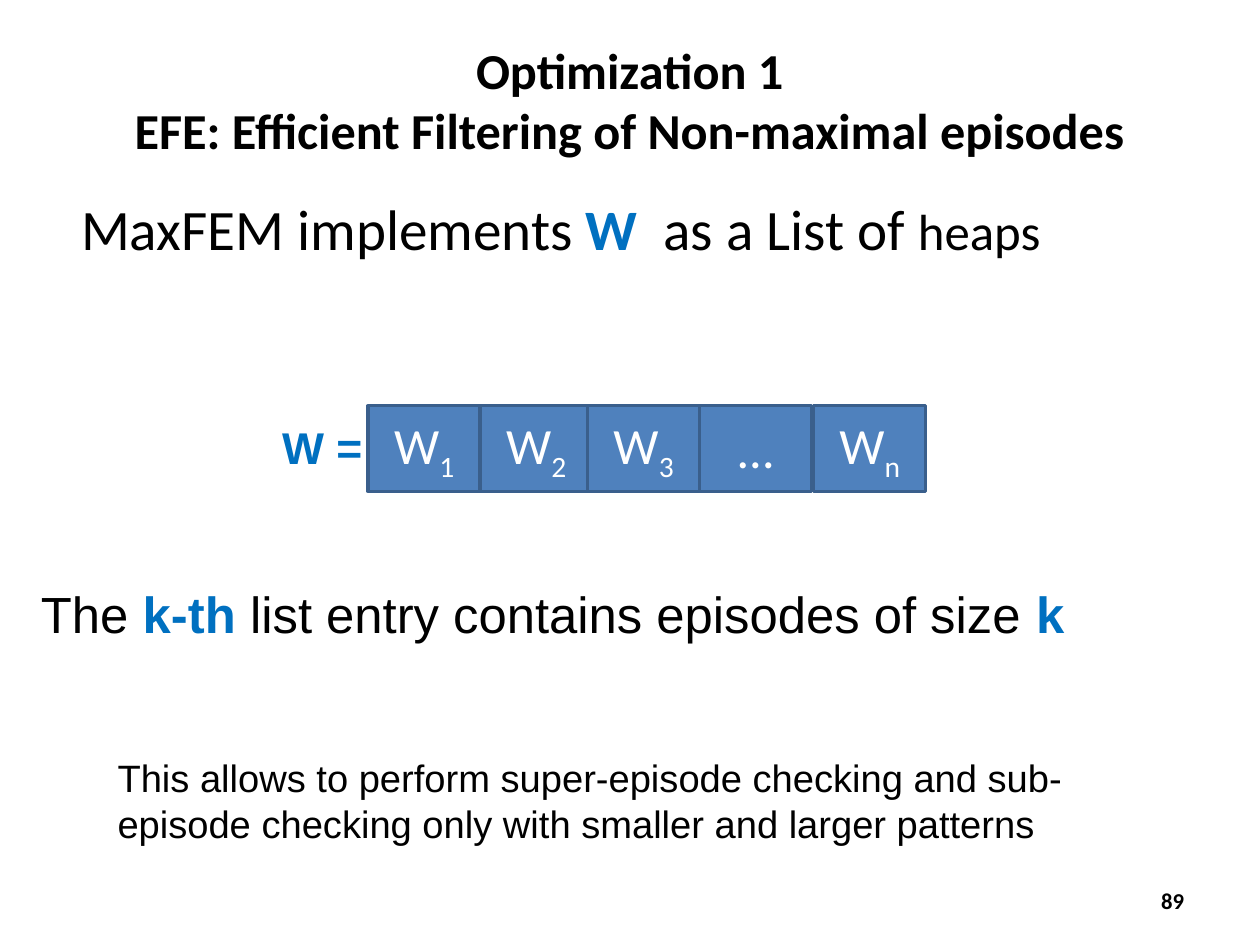
from pptx import Presentation
from pptx.dml.color import RGBColor
from pptx.enum import shapes, text
from pptx.util import Cm, Inches, Pt

BLACK, WHITE, BLUE = "000000", "FFFFFF", "0070C0"
CELL_FILL, CELL_LINE = "4F81BD", "3A5F8C"


def color(value):
    return RGBColor.from_string(value)


def add_run(p, words, size, font="Calibri", fill=BLACK, bold=False):
    r = p.add_run()
    r.text = words
    r.font.name = font
    r.font.size = Pt(size)
    r.font.bold = bold
    r.font.color.rgb = color(fill)
    return r


def set_frame(tf, inset=(0.1, 0.05), anchor=text.MSO_ANCHOR.TOP, wrap=True):
    tf.auto_size = text.MSO_AUTO_SIZE.NONE
    tf.word_wrap = wrap
    tf.vertical_anchor = anchor
    tf.margin_left = tf.margin_right = Inches(inset[0])
    tf.margin_top = tf.margin_bottom = Inches(inset[1])
    return tf.paragraphs[0]


def add_title(slide, box, lines):
    sp = slide.shapes.title
    sp.left, sp.top, sp.width, sp.height = map(Inches, box)
    p = set_frame(sp.text_frame, (0.11, 0.06), text.MSO_ANCHOR.MIDDLE)
    p.alignment = text.PP_ALIGN.CENTER
    for i, line in enumerate(lines):
        if i:
            p.add_line_break()
        add_run(p, line, 31.7, bold=True)


def add_text(slide, box, runs, font="Arial", **frame):
    sp = slide.shapes.add_textbox(*map(Inches, box))
    p = set_frame(sp.text_frame, **frame)
    for words, size, fill, bold in runs:
        add_run(p, words, size, font, fill, bold)
    return p


def add_heap_list(slide, box, cell_width, cells):
    left, top, height = box
    for offset, name, index in cells:
        sp = slide.shapes.add_shape(
            shapes.MSO_SHAPE.RECTANGLE, Inches(left + offset), Inches(top),
            Inches(cell_width), Inches(height))
        sp.shadow.inherit = False
        sp.fill.solid()
        sp.fill.fore_color.rgb = color(CELL_FILL)
        sp.line.color.rgb = color(CELL_LINE)
        sp.line.width = Pt(2)
        p = set_frame(sp.text_frame, anchor=text.MSO_ANCHOR.MIDDLE)
        p.alignment = text.PP_ALIGN.CENTER
        add_run(p, name, 32, fill=WHITE)
        if index:
            r = add_run(p, index, 32, fill=WHITE)
            r.font._element.set("baseline", "-25000")
    add_text(slide, (left - 0.85, top + 0.08, 1.01, 0.57),
             [("W =", 28, BLUE, True)], wrap=False)


def add_slide_number(slide, box, number):
    p = add_text(slide, box, [(number, 14.3, BLACK, True)], "Calibri",
                 inset=(0.11, 0.06), anchor=text.MSO_ANCHOR.MIDDLE)
    p.alignment = text.PP_ALIGN.RIGHT
    p.line_spacing = 0.93


def main():
    prs = Presentation()
    prs.slide_width, prs.slide_height = Cm(28), Cm(21)
    slide = prs.slides.add_slide(prs.slide_layouts[5])
    add_title(slide, (0, 0.44, 11.02, 0.86),
              ["Optimization 1", "EFE: Efficient Filtering of Non-maximal episodes"])
    add_text(slide, (0.6, 1.63, 9.92, 5.46),
             [("MaxFEM implements ", 36, BLACK, False), ("W", 36, BLUE, True),
              ("  as a List of ", 36, BLACK, False), ("heaps", 32, BLACK, False)],
             "Calibri", inset=(0.11, 0.06))
    add_heap_list(slide, (3.22, 3.55, 0.75), 0.98,
                  [(0, "W", "1"), (0.98, "W", "2"), (1.92, "W", "3"),
                   (2.9, "…", ""), (3.9, "W", "n")])
    add_text(slide, (0.26, 5.05, 10.58, 0.64),
             [("The ", 32, BLACK, False), ("k-th ", 32, BLUE, True),
              ("list entry contains episodes of size ", 32, BLACK, False),
              ("k", 32, BLUE, True)])
    add_text(slide, (0.93, 6.55, 9.25, 0.91),
             [("This allows to perform super-episode checking and sub-episode "
               "checking only with smaller and larger patterns", 24, BLACK, False)])
    add_slide_number(slide, (7.9, 7.67, 2.57, 0.44), "89")
    prs.save("out.pptx")


if __name__ == "__main__":
    main()
